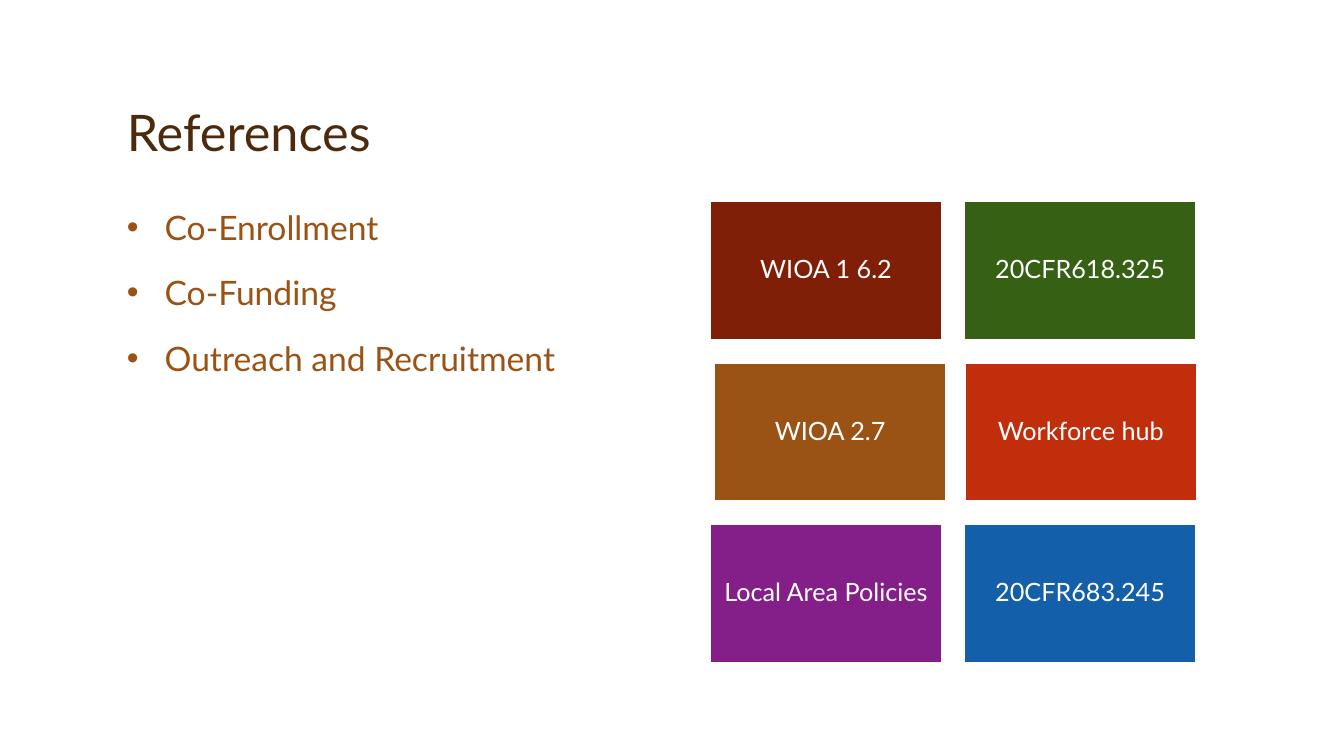
import pptx
import pptx.dml.color
import pptx.enum.shapes
import pptx.enum.text
import pptx.oxml.ns
import pptx.util
from lxml import etree

Pt = pptx.util.Pt
ANCHOR = pptx.enum.text.MSO_ANCHOR
ALIGN = pptx.enum.text.PP_ALIGN


def rgb(value):
    return pptx.dml.color.RGBColor.from_string(value)


def add_text(p, text, font="Lato", size=18, color="FFFFFF", align=ALIGN.LEFT,
             line_spacing=1.0, space_before=0):
    p.alignment = align
    p.line_spacing = line_spacing
    p.space_before = Pt(space_before)
    r = p.add_run()
    r.text = text
    r.font.name = font
    r.font.size = Pt(size)
    r.font.color.rgb = rgb(color)


class SlideBuilder:
    """Holds the style and the current slide; lengths are in points."""

    title_color = "4D2A0B"
    body_color = "9A5315"
    white = "FFFFFF"

    def __init__(self, s):
        self.s = s

    def text_frame(self, x, y, w, h, anchor=ANCHOR.TOP):
        tf = self.s.shapes.add_textbox(Pt(x), Pt(y), Pt(w), Pt(h)).text_frame
        tf.word_wrap = True
        tf.vertical_anchor = anchor
        return tf

    def title(self, text, x, y, w, h):
        tf = self.text_frame(x, y, w, h, ANCHOR.BOTTOM)
        add_text(tf.paragraphs[0], text, size=36, color=self.title_color,
                 line_spacing=0.9)

    def bullets(self, items, x, y, w, h, indent=27):
        tf = self.text_frame(x, y, w, h)
        for i, item in enumerate(items):
            p = tf.add_paragraph() if i else tf.paragraphs[0]
            add_text(p, item, size=24, color=self.body_color,
                     space_before=18 if i else 0)
            pPr = p._p.get_or_add_pPr()
            pPr.set("marL", str(Pt(indent)))
            pPr.set("indent", str(-Pt(indent)))
            for tag, key, value in (("a:buFont", "typeface", "Arial"),
                                    ("a:buChar", "char", "•")):
                etree.SubElement(pPr, pptx.oxml.ns.qn(tag)).set(key, value)

    def tile(self, text, fill, x, y, w, h, inset=5):
        sp = self.s.shapes.add_shape(pptx.enum.shapes.MSO_SHAPE.RECTANGLE,
                                     Pt(x), Pt(y), Pt(w), Pt(h))
        sp.shadow.inherit = False
        sp.fill.solid()
        sp.fill.fore_color.rgb = rgb(fill)
        sp.line.color.rgb = rgb(self.white)
        sp.line.width = Pt(1)
        tf = sp.text_frame
        tf.word_wrap = True
        tf.vertical_anchor = ANCHOR.MIDDLE
        tf.margin_left = tf.margin_right = Pt(inset)
        tf.margin_top = tf.margin_bottom = Pt(inset)
        add_text(tf.paragraphs[0], text, color=self.white,
                 align=ALIGN.CENTER, line_spacing=0.9)


def main():
    prs = pptx.Presentation()
    prs.slide_width, prs.slide_height = Pt(960), Pt(540)
    slide = SlideBuilder(prs.slides.add_slide(prs.slide_layouts[6]))

    # Title and topics
    slide.title("References", 83.5, 24, 792, 95.5)
    slide.bullets(["Co-Enrollment", "Co-Funding", "Outreach and Recruitment"],
                  83.5, 144, 390, 330)

    # Reference tiles: text, fill, shift to the right of the grid
    tiles = [
        ("WIOA 1 6.2", "801F08", 0),
        ("20CFR618.325", "366013", 0),
        ("WIOA 2.7", "9A5315", 3),
        ("Workforce hub", "C02E0C", 0.5),
        ("Local Area Policies", "841E89", 0),
        ("20CFR683.245", "145FAA", 0),
    ]
    left, top, width, height = 507.5, 144, 165, 98.75
    column_step, row_step = 181.5, 115.25
    for i, (text, fill, shift) in enumerate(tiles):
        row, column = divmod(i, 2)
        slide.tile(text, fill, left + column * column_step + shift,
                   top + row * row_step, width, height)

    prs.save("out.pptx")


if __name__ == "__main__":
    main()
